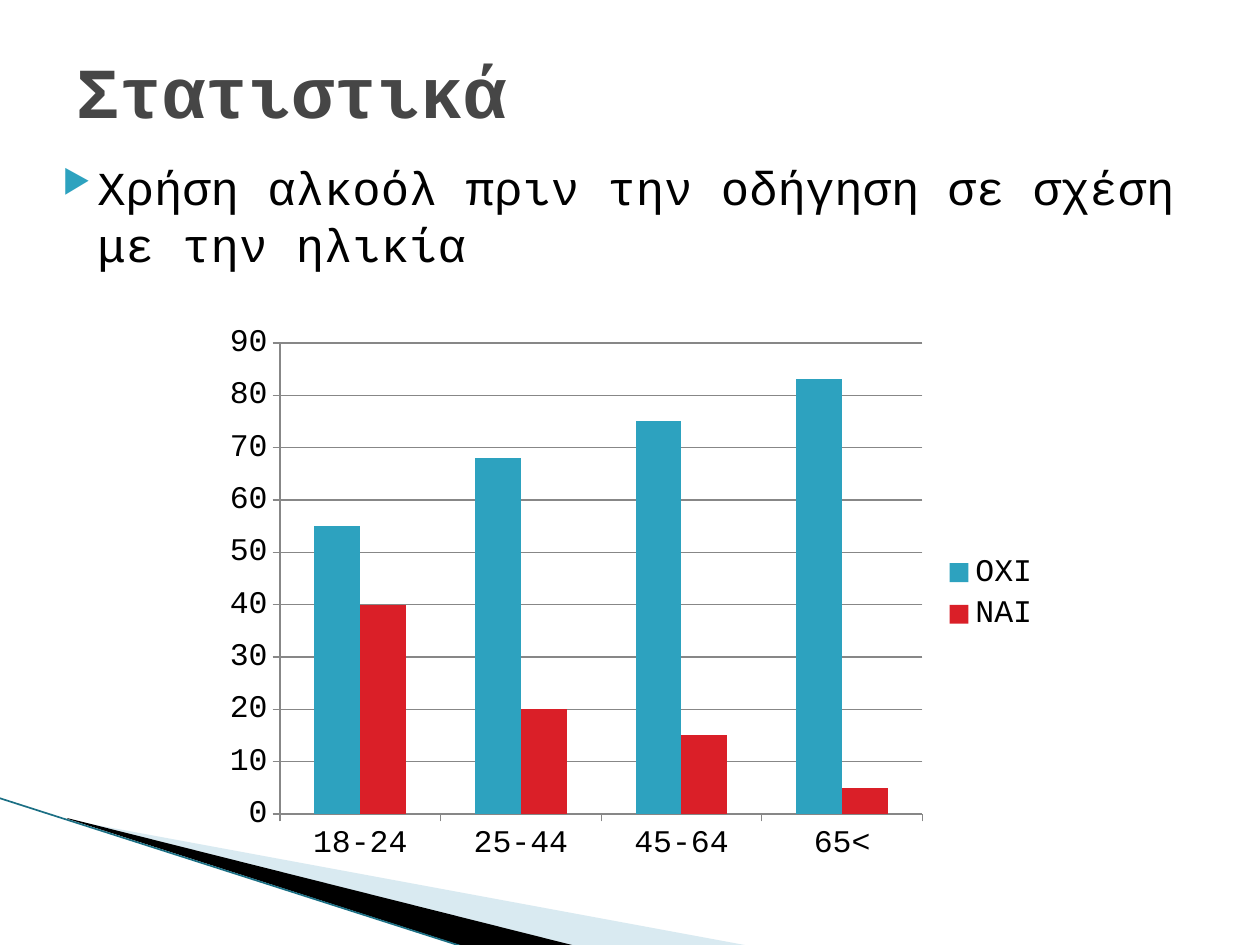
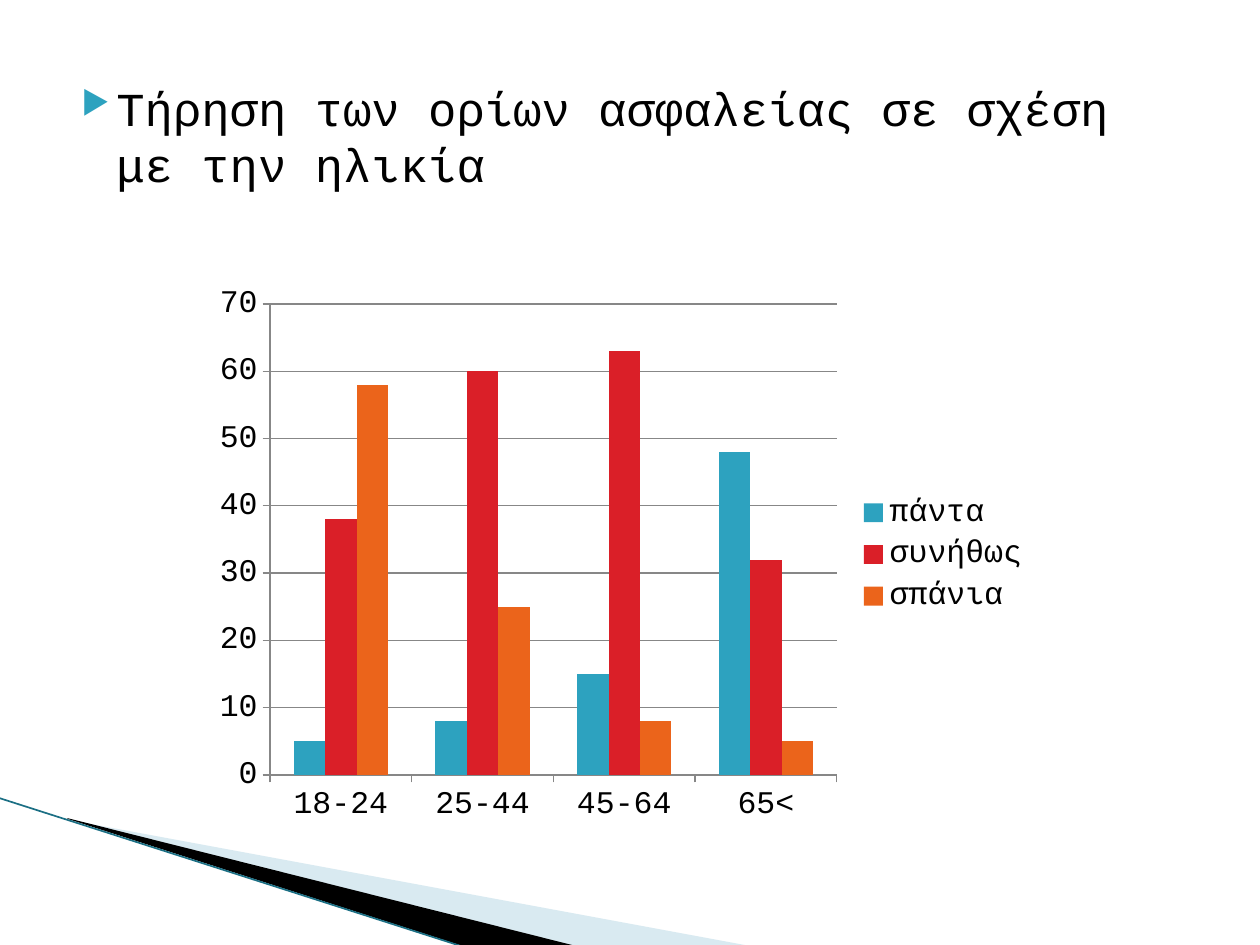
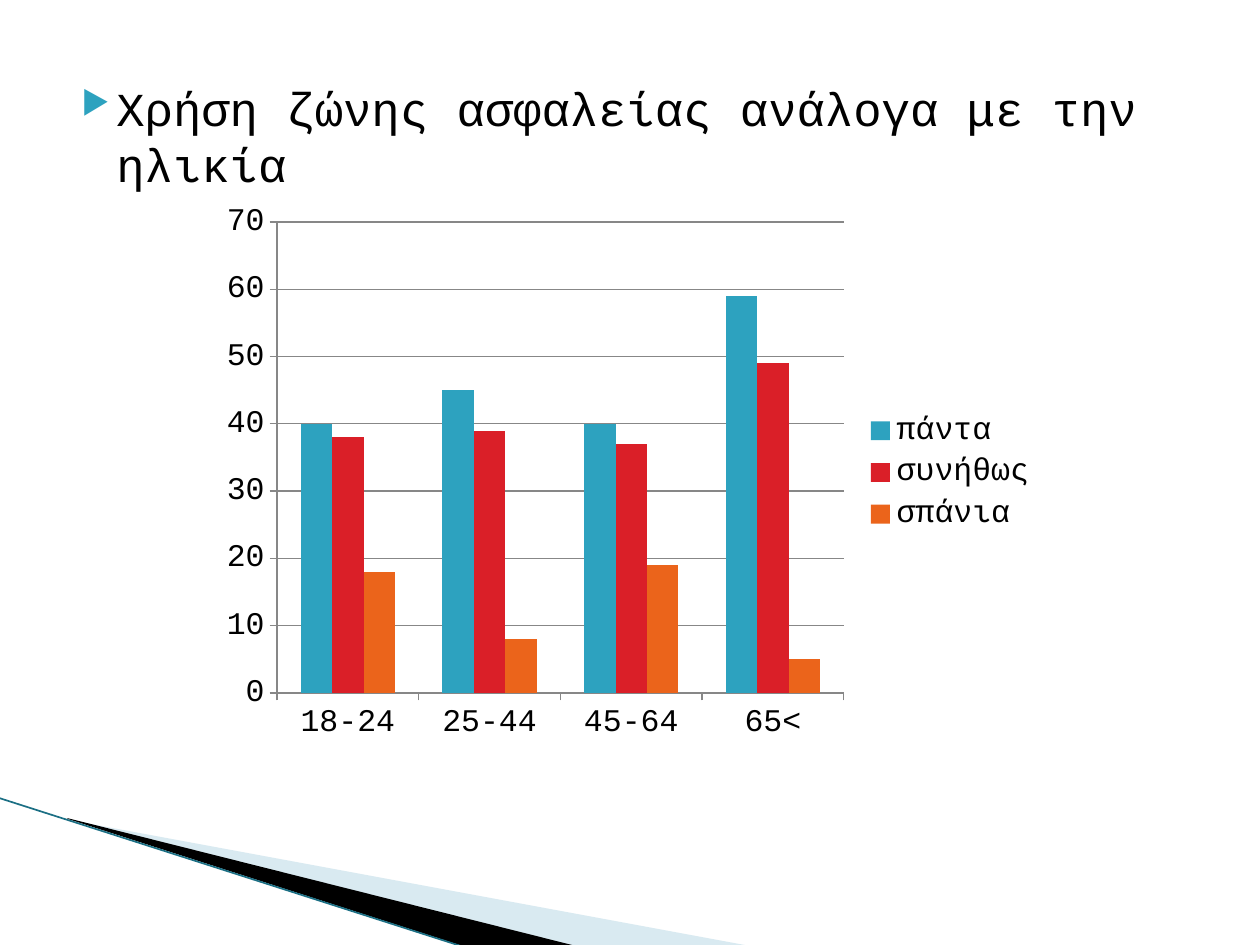
from lxml import etree
from pptx import Presentation
from pptx import util as u
from pptx.chart.data import CategoryChartData
from pptx.dml.color import RGBColor
from pptx.enum import chart as ch, shapes, text
from pptx.oxml.ns import qn

PX = 914400 / 126
FONT = "Courier New"
BLACK = RGBColor(0, 0, 0)
TITLE_GREY = RGBColor(0x46, 0x46, 0x46)
AXIS_GREY = RGBColor(0x87, 0x87, 0x87)
TEAL = RGBColor(0x2D, 0xA2, 0xBF)
RED = RGBColor(0xDA, 0x1F, 0x28)
ORANGE = RGBColor(0xEB, 0x64, 0x1B)
PALE_BLUE = RGBColor(0xA0, 0xCB, 0xDC)
EDGE_TEAL = RGBColor(0x1B, 0x6F, 0x84)

AGES = ["18-24", "25-44", "45-64", "65<"]
SERIES_COLOURS = [TEAL, RED, ORANGE]
# Corner wedges: outline, colour, opacity in percent
WEDGES = [
    ([(69, 820), (750, 946), (575, 946), (69, 819)], PALE_BLUE, 40),
    ([(67, 818), (576, 946), (469, 948), (68, 819)], BLACK, 100),
]
# Boxes are left, top, width, height
SLIDES = [
    dict(title="Στατιστικά",
         topic="Χρήση αλκοόλ πριν την οδήγηση σε σχέση με την ηλικία",
         topic_box=(35, 145, 1160, 714), chart_box=(213, 314, 840, 559), top=90,
         answers={"OXI": (55, 68, 75, 83), "NAI": (40, 20, 15, 5)}),
    dict(topic="Τήρηση των ορίων ασφαλείας σε σχέση με την ηλικία",
         topic_box=(54, 66, 1134, 814), chart_box=(203, 275, 840, 559), top=70,
         answers={"πάντα": (5, 8, 15, 48), "συνήθως": (38, 60, 63, 32),
                  "σπάνια": (58, 25, 8, 5)}),
    dict(topic="Χρήση ζώνης ασφαλείας ανάλογα με την ηλικία",
         topic_box=(54, 66, 1134, 853), chart_box=(210, 193, 840, 559), top=70,
         answers={"πάντα": (40, 45, 40, 59), "συνήθως": (38, 39, 37, 49),
                  "σπάνια": (18, 8, 19, 5)}),
]


def emu(*lengths):
    return [u.Emu(round(n * PX)) for n in lengths]


def add_words(slide, box, words, size, colour, bold=False):
    frame = slide.shapes.add_textbox(*emu(*box)).text_frame
    frame.word_wrap = True
    run = frame.paragraphs[0].add_run()
    run.text = words
    run.font.name, run.font.size, run.font.bold = FONT, u.Pt(size), bold
    run.font.color.rgb = colour
    return frame


deck = Presentation()
deck.slide_width, deck.slide_height = emu(1260, 945)

for content in SLIDES:
    slide = deck.slides.add_slide(deck.slide_layouts[6])

    # Corner decoration
    for outline, colour, opacity in WEDGES:
        builder = slide.shapes.build_freeform(*outline[0], scale=PX)
        builder.add_line_segments(outline[1:], close=True)
        wedge = builder.convert_to_shape()
        wedge.shadow.inherit = False
        wedge.line.fill.background()
        wedge.fill.solid()
        wedge.fill.fore_color.rgb = colour
        if opacity < 100:
            tint = wedge.fill._xPr.find(".//" + qn("a:srgbClr"))
            etree.SubElement(tint, qn("a:alpha"), val=str(opacity * 1000))
    edge = slide.shapes.add_connector(
        shapes.MSO_CONNECTOR.STRAIGHT, *emu(-1, 798, 467, 948))
    edge.line.color.rgb = EDGE_TEAL
    edge.line.width = u.Pt(0.95)
    etree.SubElement(edge._element.spPr, qn("a:effectLst"))

    # Bulleted topic
    topic = add_words(slide, content["topic_box"], content["topic"], 27, BLACK)
    topic.margin_top = emu(13)[0]
    margin, hanging = emu(50, -35)
    props = topic.paragraphs[0]._p.get_or_add_pPr()
    props.set("marL", str(margin))
    props.set("indent", str(hanging))
    bullet_colour = etree.SubElement(props, qn("a:buClr"))
    etree.SubElement(bullet_colour, qn("a:srgbClr"), val=str(TEAL))
    etree.SubElement(props, qn("a:buSzPct"), val="68000")
    etree.SubElement(props, qn("a:buChar"), char="▶")

    # Title
    if "title" in content:
        title = add_words(slide, (64, 26, 1134, 127), content["title"], 41,
                          TITLE_GREY, bold=True)
        title.vertical_anchor = text.MSO_ANCHOR.MIDDLE

    # Answers by age
    data = CategoryChartData()
    data.categories = AGES
    for answer, values in content["answers"].items():
        data.add_series(answer, values)
    chart = slide.shapes.add_chart(ch.XL_CHART_TYPE.COLUMN_CLUSTERED,
                                   *emu(*content["chart_box"]), data).chart
    chart.has_title = False
    chart.font.name, chart.font.size = FONT, u.Pt(18)
    chart.font.color.rgb = BLACK
    chart.has_legend = True
    chart.legend.position = ch.XL_LEGEND_POSITION.RIGHT
    chart.legend.include_in_layout = False

    columns = chart.plots[0]
    columns.gap_width, columns.overlap = 150, 0
    columns.vary_by_categories = False
    for series, colour in zip(columns.series, SERIES_COLOURS):
        series.format.fill.solid()
        series.format.fill.fore_color.rgb = colour

    scale = chart.value_axis
    scale.minimum_scale, scale.maximum_scale = 0, content["top"]
    scale.major_unit = 10
    scale.has_major_gridlines = True
    for ruled in (scale, chart.category_axis, scale.major_gridlines):
        ruled.format.line.color.rgb = AXIS_GREY
        ruled.format.line.width = u.Pt(0.75)

deck.save("out.pptx")
